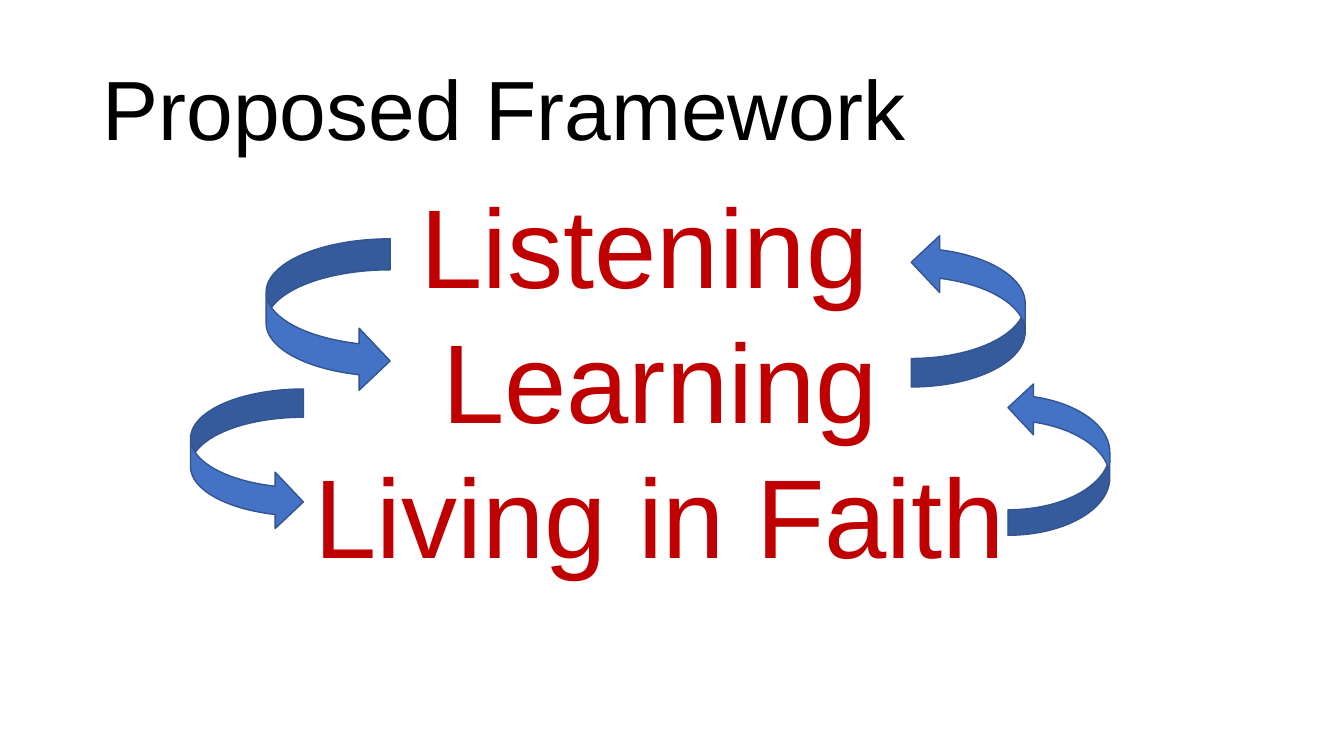
from dataclasses import dataclass

from pptx import Presentation
from pptx.dml.color import RGBColor
from pptx.enum.shapes import MSO_SHAPE
from pptx.enum.text import MSO_ANCHOR, MSO_AUTO_SIZE, PP_ALIGN
from pptx.util import Pt
from lxml.etree import SubElement
from pptx.oxml.ns import qn


@dataclass(frozen=True)
class Theme:
    font: str = "Arial"
    title_size: int = 60
    step_size: int = 80
    title_color: RGBColor = RGBColor(0x00, 0x00, 0x00)
    step_color: RGBColor = RGBColor(0xC0, 0x00, 0x00)
    arrow_fill: RGBColor = RGBColor(0x44, 0x72, 0xC4)
    arrow_line: RGBColor = RGBColor(0x32, 0x54, 0x91)


theme = Theme()


def write_paragraph(para, text, *, size, color, align, space_before=0):
    properties = para._p.get_or_add_pPr()
    properties.set("marL", "0")
    properties.set("indent", "0")
    SubElement(properties, qn("a:buNone"))
    para.alignment = align
    para.line_spacing = 0.9
    para.space_before = Pt(space_before)
    span = para.add_run()
    span.text = text
    span.font.name = theme.font
    span.font.size = Pt(size)
    span.font.color.rgb = color


def place(box, left, top, width, height):
    box.left, box.top = Pt(left), Pt(top)
    box.width, box.height = Pt(width), Pt(height)


# Slide with title and body
deck = Presentation()
deck.slide_width, deck.slide_height = Pt(960), Pt(540)
page = deck.slides.add_slide(deck.slide_layouts[1])

# Title
title = page.shapes.title
place(title, 66, 28.75, 828, 104.4)
title.text_frame.vertical_anchor = MSO_ANCHOR.MIDDLE
title.text_frame.auto_size = MSO_AUTO_SIZE.NONE
write_paragraph(title.text_frame.paragraphs[0], "Proposed Framework",
                size=theme.title_size, color=theme.title_color, align=PP_ALIGN.LEFT)

# Three steps of the framework
body = page.placeholders[1]
place(body, 57.6, 133.2, 828, 342.7)
steps = body.text_frame
steps.auto_size = MSO_AUTO_SIZE.NONE
for index, step in enumerate(["Listening ", "Learning", "Living in Faith"]):
    para = steps.add_paragraph() if index else steps.paragraphs[0]
    write_paragraph(para, step, size=theme.step_size, color=theme.step_color,
                    align=PP_ALIGN.CENTER, space_before=10 if index else 0)

# Arrows down on the left, back up on the right
arrows = [
    (190.1, 170.6, 88.6, 109.4, 0),
    (136.1, 277.9, 80.6, 100.8, 0),
    (720, 272.9, 72.7, 109.4, 180),
    (650.9, 167, 81.4, 109.4, 180),
]
for left, top, width, height, rotation in arrows:
    arrow = page.shapes.add_shape(MSO_SHAPE.CURVED_RIGHT_ARROW,
                                  Pt(left), Pt(top), Pt(width), Pt(height))
    arrow.rotation = rotation
    arrow.shadow.inherit = False
    arrow.fill.solid()
    arrow.fill.fore_color.rgb = theme.arrow_fill
    arrow.line.color.rgb = theme.arrow_line
    arrow.line.width = Pt(1)

deck.save("out.pptx")
